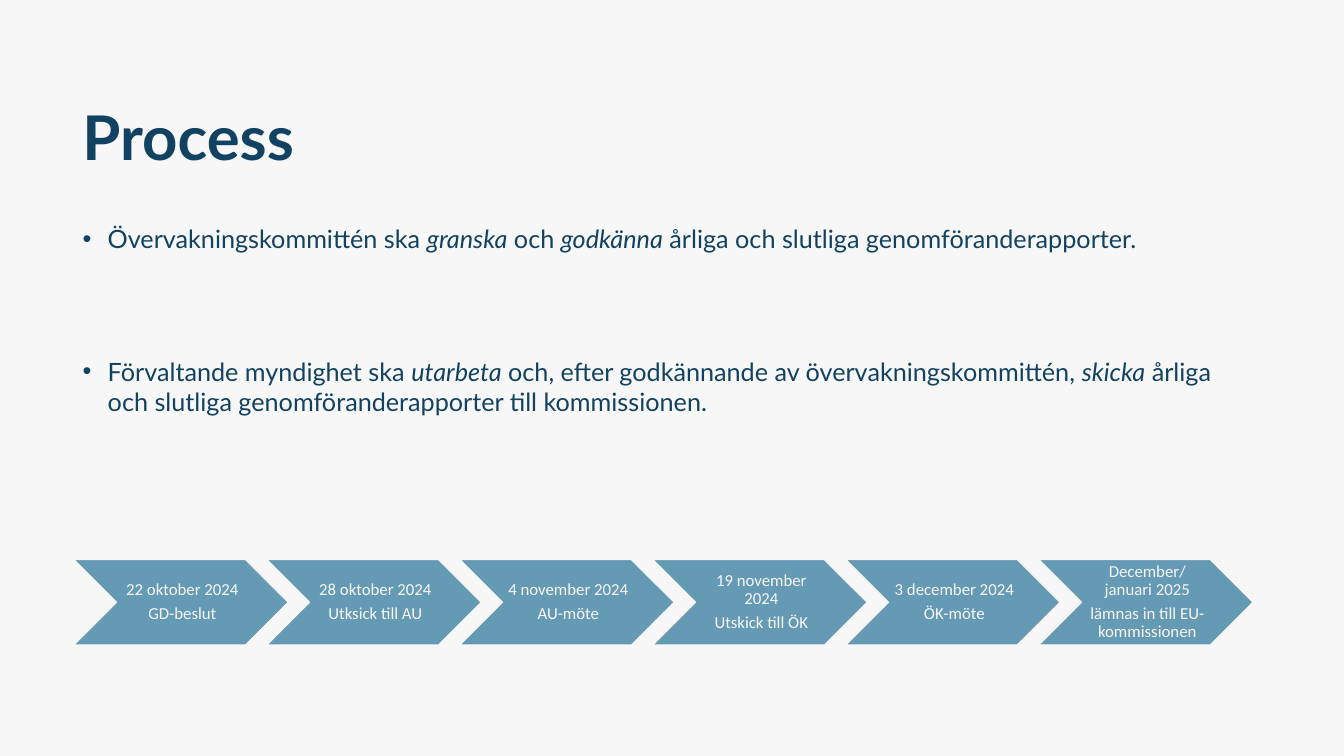
from typing import NamedTuple

from pptx import Presentation
from pptx.dml.color import RGBColor
from pptx.enum.shapes import MSO_SHAPE
from pptx.enum.text import MSO_ANCHOR, PP_ALIGN
from pptx.oxml.ns import qn
from pptx.slide import Slide
from pptx.text.text import TextFrame
from pptx.util import Inches, Pt

NAVY = RGBColor(0x12, 0x42, 0x61)
STEEL = RGBColor(0x64, 0x9A, 0xB3)
OFF_WHITE = RGBColor(0xF8, 0xF7, 0xF7)

FIRST_LEFT, LAST_LEFT = 0.73, 10.3
STEP_TOP, STEP_WIDTH, STEP_HEIGHT = 5.55, 2.13, 0.85


class Span(NamedTuple):
    text: str
    italic: bool = False


class Step(NamedTuple):
    date: str
    event: str


DUTIES = [
    [
        Span("Övervakningskommittén ska "),
        Span("granska", True),
        Span(" och "),
        Span("godkänna", True),
        Span(" årliga och slutliga genomföranderapporter."),
    ],
    [
        Span("Förvaltande myndighet ska "),
        Span("utarbeta", True),
        Span(" och, efter godkännande av övervakningskommittén, "),
        Span("skicka", True),
        Span(" årliga och slutliga genomföranderapporter till kommissionen."),
    ],
]

STEPS = [
    Step("22 oktober 2024", "GD-beslut"),
    Step("28 oktober 2024", "Utksick till AU"),
    Step("4 november 2024", "AU-möte"),
    Step("19 november 2024", "Utskick till ÖK"),
    Step("3 december 2024", "ÖK-möte"),
    Step("December/januari 2025", "lämnas in till EU-kommissionen"),
]


def add_text_frame(page: Slide, left: float, top: float, width: float, height: float) -> TextFrame:
    box = page.shapes.add_textbox(Inches(left), Inches(top), Inches(width), Inches(height))
    box.text_frame.word_wrap = True
    return box.text_frame


def add_title(page: Slide, text: str) -> None:
    frame = add_text_frame(page, 0.72, 0.62, 9.97, 1.45)
    frame.vertical_anchor = MSO_ANCHOR.MIDDLE
    para = frame.paragraphs[0]
    para.text = text
    para.font.name, para.font.size, para.font.bold = "Lato", Pt(44), True
    para.font.color.rgb = NAVY


def add_duties(page: Slide, duties: list[list[Span]]) -> None:
    frame = add_text_frame(page, 0.72, 2.17, 11.51, 3.0)
    for index, duty in enumerate(duties):
        para = frame.add_paragraph() if index else frame.paragraphs[0]
        if index:
            para.space_before = Pt(73)
        # Hanging bullet
        properties = para._p.get_or_add_pPr()
        properties.set("marL", str(Inches(0.25)))
        properties.set("indent", str(Inches(-0.25)))
        bullet_font = properties.makeelement(qn("a:buFont"), {"typeface": "Arial"})
        bullet = properties.makeelement(qn("a:buChar"), {"char": "•"})
        properties.extend([bullet_font, bullet])
        para.font.name, para.font.size = "Lato", Pt(18)
        para.font.color.rgb = NAVY
        for span in duty:
            run = para.add_run()
            run.text = span.text
            if span.italic:
                run.font.italic = True


def add_step(page: Slide, step: Step, left: float) -> None:
    chevron = page.shapes.add_shape(
        MSO_SHAPE.CHEVRON, Inches(left), Inches(STEP_TOP), Inches(STEP_WIDTH), Inches(STEP_HEIGHT)
    )
    chevron.shadow.inherit = False
    chevron.fill.solid()
    chevron.fill.fore_color.rgb = STEEL
    chevron.line.color.rgb = OFF_WHITE
    chevron.line.width = Pt(1)

    frame = chevron.text_frame
    frame.word_wrap = True
    frame.vertical_anchor = MSO_ANCHOR.MIDDLE
    frame.margin_left = Inches(0.05)
    frame.margin_top = frame.margin_right = frame.margin_bottom = Inches(0.02)
    frame.text = "\n".join(step)
    for para in frame.paragraphs:
        para.alignment = PP_ALIGN.CENTER
        para.line_spacing = 0.9
        para.font.name, para.font.size = "Calibri", Pt(12)
        para.font.color.rgb = OFF_WHITE
    frame.paragraphs[0].space_after = Pt(4)


def main() -> None:
    deck = Presentation()
    deck.slide_width, deck.slide_height = Inches(13.33), Inches(7.5)
    page = deck.slides.add_slide(deck.slide_layouts[6])
    page.background.fill.solid()
    page.background.fill.fore_color.rgb = OFF_WHITE

    # Heading and duties
    add_title(page, "Process")
    add_duties(page, DUTIES)

    # Timeline of chevrons
    pitch = (LAST_LEFT - FIRST_LEFT) / (len(STEPS) - 1)
    for index, step in enumerate(STEPS):
        add_step(page, step, FIRST_LEFT + index * pitch)

    deck.save("out.pptx")


if __name__ == "__main__":
    main()
